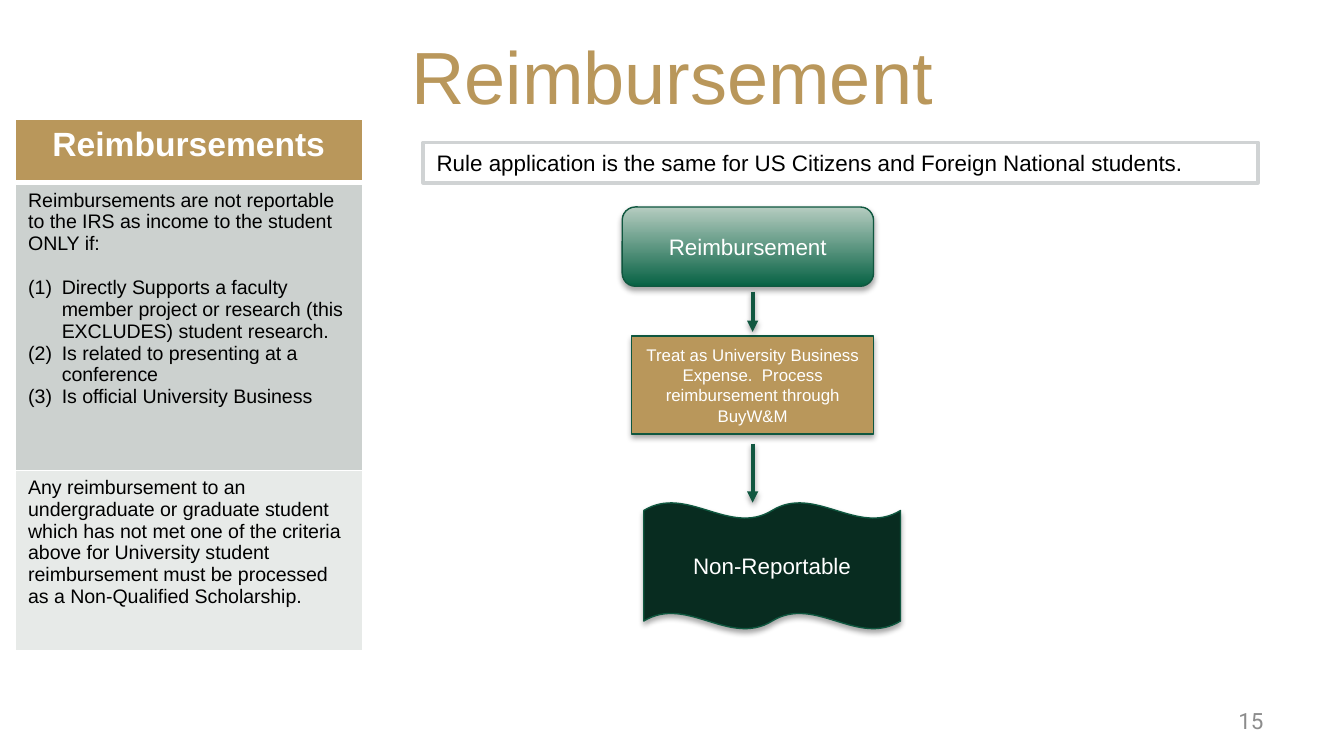
from lxml import etree
from pptx import Presentation, util as u
from pptx.dml.color import RGBColor
from pptx.enum import shapes, text
from pptx.oxml import parse_xml
from pptx.oxml.ns import qn

COLORS = {"gold": "B9975B", "line": "0F573F", "arrow": "115740", "dark": "082C20",
          "green": "076244", "mint": "B5CCC0", "rule": "D0D3D4", "white": "FFFFFF",
          "black": "000000", "gray": "8C8C8C", "row1": "CCD1CF", "row2": "E7EAE8"}
A = "http://schemas.openxmlformats.org/drawingml/2006/main"
ALIGN, ANCHOR, SHAPE = text.PP_ALIGN, text.MSO_ANCHOR, shapes.MSO_SHAPE
WIDTH = 10
HEIGHT = WIDTH * 9 / 16

# Content
TITLE = "Reimbursement"
PAGE = "15"
RULE = "Rule application is the same for US Citizens and Foreign National students."
HEADER = "Reimbursements"
CONDITION = ("Reimbursements are not reportable to the IRS as income to the student "
             "ONLY if:")
CRITERIA = ["Directly Supports a faculty member project or research (this EXCLUDES) "
            "student research.",
            "Is related to presenting at a conference",
            "Is official University Business"]
OTHERWISE = ("Any reimbursement to an undergraduate or graduate student which has not "
             "met one of the criteria above for University student reimbursement must "
             "be processed as a Non-Qualified Scholarship.")
# text, shape, fill (two colours make a gradient), font size, box
STEPS = [
    ("Reimbursement", SHAPE.ROUNDED_RECTANGLE, ("green", "mint"), 12,
     (4.63, 1.54, 1.87, 0.59)),
    ("Treat as University Business Expense.  Process reimbursement through BuyW&M",
     SHAPE.RECTANGLE, ("gold",), 9, (4.7, 2.5, 1.8, 0.73)),
    ("Non-Reportable", SHAPE.DOUBLE_WAVE, ("dark",), 12, (4.79, 3.74, 1.91, 0.94)),
]
ARROW_X, ARROWS = 5.6, [(2.17, 2.47), (3.3, 3.74)]
TABLE_BOX, ROWS = (0.11, 0.89, 2.59, 3.95), (0.47, 2.14, 1.34)


def rgb(name):
    return RGBColor.from_string(COLORS[name])


def inches(values):
    return [u.Inches(v) for v in values]


def write(tf, lines, size=12, color="black", font="Arial", bold=False,
          align=ALIGN.LEFT, anchor=ANCHOR.MIDDLE):
    """Fill a text frame, one paragraph for each line."""
    tf.word_wrap, tf.vertical_anchor = True, anchor
    for i, line in enumerate(lines):
        p = tf.add_paragraph() if i else tf.paragraphs[0]
        p.alignment = align
        r = p.add_run()
        r.text = line
        r.font.size, r.font.name, r.font.bold = u.Pt(size), font, bold
        r.font.color.rgb = rgb(color)


def add_effects(sp, shadow_alpha, distance):
    """Give a shape or connector a soft shadow straight down."""
    pr = sp._element.spPr
    for old in pr.findall(qn("a:effectLst")):
        pr.remove(old)
    pr.append(parse_xml(
        f'<a:effectLst xmlns:a="{A}"><a:outerShdw blurRad="{u.Pt(3.1)}" '
        f'dist="{u.Pt(distance)}" dir="5400000" rotWithShape="0">'
        f'<a:srgbClr val="000000"><a:alpha val="{shadow_alpha}000"/></a:srgbClr>'
        '</a:outerShdw></a:effectLst>'))


def add_box(s, kind, box, fills, line, width):
    sp = s.shapes.add_shape(kind, *inches(box))
    sp.shadow.inherit = False
    if len(fills) == 2:
        sp.fill.gradient()
        sp.fill.gradient_angle = 90
        for stop, name in zip(sp.fill.gradient_stops, fills):
            stop.color.rgb = rgb(name)
    else:
        sp.fill.solid()
        sp.fill.fore_color.rgb = rgb(fills[0])
    sp.line.color.rgb, sp.line.width = rgb(line), u.Pt(width)
    return sp


def add_arrow(s, top, bottom):
    c = s.shapes.add_connector(shapes.MSO_CONNECTOR.STRAIGHT,
                               *inches((ARROW_X, top, ARROW_X, bottom)))
    c.line.color.rgb, c.line.width = rgb("arrow"), u.Pt(2)
    etree.SubElement(c.line._get_or_add_ln(), qn("a:tailEnd"), type="triangle")
    add_effects(c, 38, 1.6)


def style_cell(cell, fill, top=1, bottom=1):
    pr = cell._tc.get_or_add_tcPr()
    for side, width in (("L", 1), ("R", 1), ("T", top), ("B", bottom)):
        pr.append(parse_xml(
            f'<a:ln{side} xmlns:a="{A}" w="{u.Pt(width)}"><a:solidFill>'
            f'<a:srgbClr val="{COLORS["white"]}"/></a:solidFill></a:ln{side}>'))
    cell.fill.solid()
    cell.fill.fore_color.rgb = rgb(fill)


def number(p):
    pr = p._p.get_or_add_pPr()
    pr.set("marL", str(u.Inches(0.25)))
    pr.set("indent", str(-u.Inches(0.25)))
    etree.SubElement(pr, qn("a:buFont"), typeface="+mj-lt")
    etree.SubElement(pr, qn("a:buAutoNum"), type="arabicParenBoth")


def add_table(s):
    table = s.shapes.add_table(len(ROWS), 1, *inches(TABLE_BOX)).table
    table.horz_banding = False
    for row, height in zip(table.rows, ROWS):
        row.height = u.Inches(height)
    header, rules, rest = (table.cell(i, 0) for i in range(len(ROWS)))
    style_cell(header, "gold", bottom=3)
    style_cell(rules, "row1", top=3)
    style_cell(rest, "row2")
    write(header.text_frame, [HEADER], size=18, color="white", bold=True,
          align=ALIGN.CENTER, anchor=ANCHOR.TOP)
    write(rules.text_frame, [CONDITION] + CRITERIA, size=10.5, anchor=ANCHOR.TOP)
    write(rest.text_frame, [OTHERWISE], size=10.5, anchor=ANCHOR.TOP)
    criteria = rules.text_frame.paragraphs[1:]
    for p in criteria:
        number(p)
    criteria[0].space_before = u.Pt(12)


def main():
    prs = Presentation()
    prs.slide_width, prs.slide_height = inches((WIDTH, HEIGHT))
    s = prs.slides.add_slide(prs.slide_layouts[5])

    # Title and page number
    title = s.shapes.title
    title.left, title.top, title.width, title.height = inches((0.5, 0.23, 9, 0.66))
    write(title.text_frame, [TITLE], size=39.6, color="gold", align=ALIGN.CENTER)
    page = s.shapes.add_textbox(*inches((7.17, 5.21, 2.33, 0.3)))
    write(page.text_frame, [PAGE], color="gray", font="Roboto", align=ALIGN.RIGHT)

    # Flow from reimbursement to outcome
    for label, kind, fills, size, box in STEPS:
        sp = add_box(s, kind, box, fills, "line", 0.75)
        add_effects(sp, 35, 1.8)
        write(sp.text_frame, [label], size=size, color="white", align=ALIGN.CENTER)
    for top, bottom in ARROWS:
        add_arrow(s, top, bottom)

    # Rule banner and criteria table
    banner = add_box(s, SHAPE.RECTANGLE, (3.15, 1.06, 6.21, 0.3), ("white",), "rule", 2)
    write(banner.text_frame, [RULE])
    add_table(s)
    prs.save("out.pptx")


if __name__ == "__main__":
    main()
